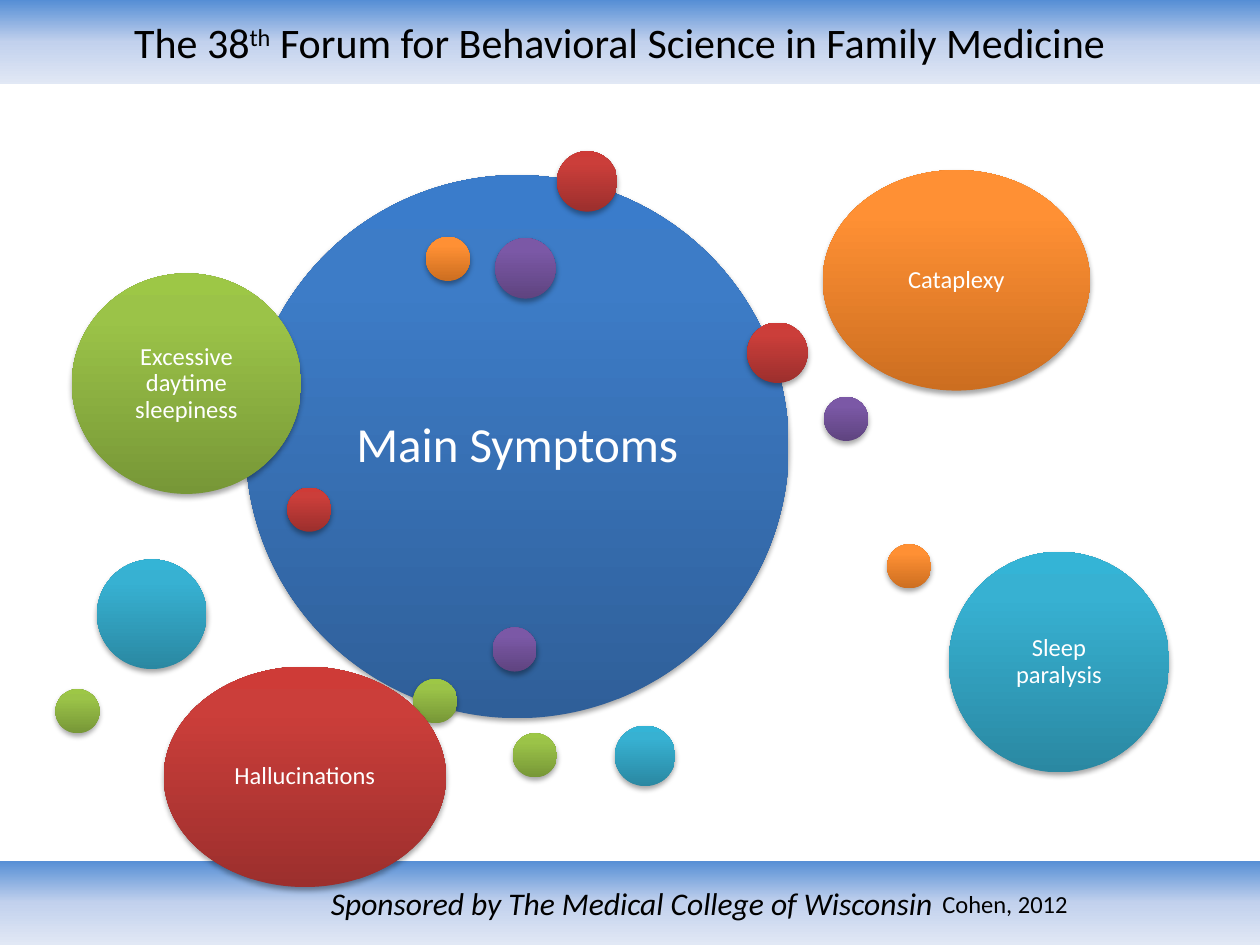
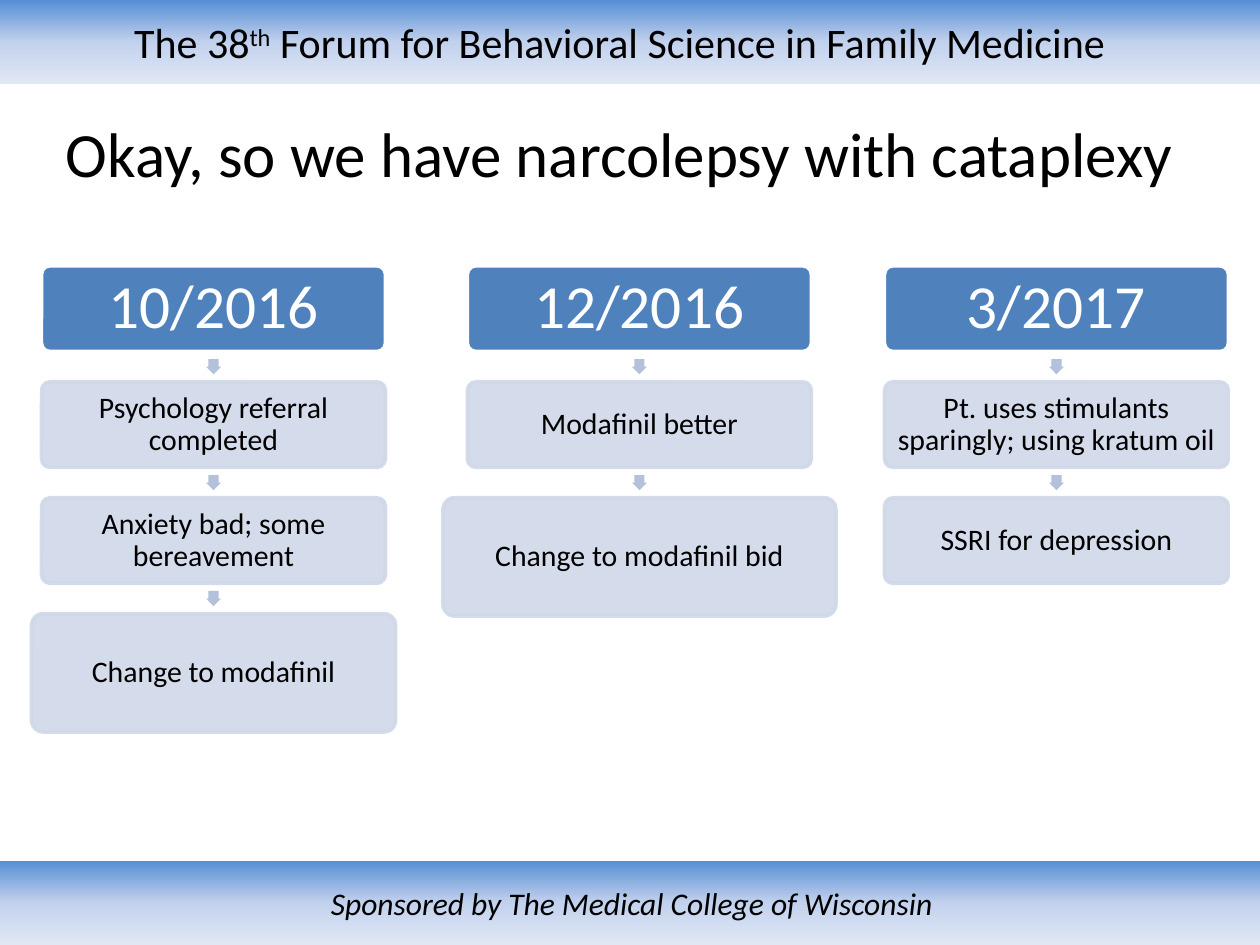
"""Build two slides on narcolepsy: a bubble diagram of symptoms and a treatment timeline."""
from lxml import etree
from pptx import Presentation
from pptx.dml.color import RGBColor
from pptx.enum.shapes import MSO_SHAPE
from pptx.enum.text import MSO_ANCHOR, PP_ALIGN
from pptx.oxml.ns import qn
from pptx.util import Inches, Pt

RECTANGLE = MSO_SHAPE.RECTANGLE
OVAL = MSO_SHAPE.OVAL
ROUNDED = MSO_SHAPE.ROUNDED_RECTANGLE
DOWN_ARROW = MSO_SHAPE.DOWN_ARROW
MIDDLE, TOP = MSO_ANCHOR.MIDDLE, MSO_ANCHOR.TOP
CENTER, LEFT = PP_ALIGN.CENTER, PP_ALIGN.LEFT

FONT = "Calibri"
BLACK = RGBColor(0x00, 0x00, 0x00)
WHITE = RGBColor(0xFF, 0xFF, 0xFF)
HEADING_BLUE = RGBColor(0x4F, 0x81, 0xBD)
CARD_BLUE = RGBColor(0xD0, 0xD8, 0xE8)
ARROW_BLUE = RGBColor(0xB3, 0xC1, 0xDB)
BAND = [(0, RGBColor(0x55, 0x8E, 0xD5)), (50, RGBColor(0xC2, 0xD1, 0xED)), (100, RGBColor(0xE1, 0xE8, 0xF5))]
BLUE = [(0, RGBColor(0x2F, 0x5F, 0x99)), (80, RGBColor(0x3D, 0x7C, 0xC7)), (100, RGBColor(0x3A, 0x7C, 0xCB))]
RED = [(0, RGBColor(0x9C, 0x2F, 0x2D)), (80, RGBColor(0xCB, 0x3E, 0x3A)), (100, RGBColor(0xCE, 0x3B, 0x37))]
GREEN = [(0, RGBColor(0x77, 0x97, 0x37)), (80, RGBColor(0x9B, 0xC3, 0x48)), (100, RGBColor(0x9D, 0xC7, 0x46))]
PURPLE = [(0, RGBColor(0x5F, 0x44, 0x80)), (80, RGBColor(0x7B, 0x58, 0xA6)), (100, RGBColor(0x7C, 0x57, 0xA8))]
TEAL = [(0, RGBColor(0x2A, 0x88, 0xA2)), (80, RGBColor(0x37, 0xB1, 0xD2)), (100, RGBColor(0x34, 0xB4, 0xD6))]
ORANGE = [(0, RGBColor(0xCC, 0x6E, 0x20)), (80, RGBColor(0xFF, 0x90, 0x34)), (100, RGBColor(0xFF, 0x91, 0x36))]


def add_filled(slide, kind, left, top, width, height, fill, angle=90):
    """Add an unlined shape with a solid colour or a list of gradient stops."""
    shape = slide.shapes.add_shape(kind, Inches(left), Inches(top), Inches(width), Inches(height))
    shape.shadow.inherit = False
    shape.line.fill.background()
    if isinstance(fill, RGBColor):
        shape.fill.solid()
        shape.fill.fore_color.rgb = fill
        return shape
    shape.fill.gradient()
    shape.fill.gradient_angle = angle
    stops = next(shape._element.spPr.iter(qn("a:gsLst")))
    for stop in list(stops):
        stops.remove(stop)
    for position, color in fill:
        stop = etree.SubElement(stops, qn("a:gs"), pos=str(position * 1000))
        etree.SubElement(stop, qn("a:srgbClr"), val=str(color))
    return shape


def write(shape, parts, size, color=BLACK, inset=None, spacing=None, align=CENTER, anchor=MIDDLE):
    """Fill a shape with one paragraph made of the given runs."""
    frame = shape.text_frame
    frame.word_wrap = True
    frame.vertical_anchor = anchor
    if inset is not None:
        frame.margin_left = frame.margin_right = Inches(inset)
        frame.margin_top = frame.margin_bottom = Inches(inset)
    paragraph = frame.paragraphs[0]
    paragraph.alignment = align
    if spacing:
        paragraph.line_spacing = spacing
    for part in parts:
        run = paragraph.add_run()
        run.text = part
        run.font.name = FONT
        run.font.size = Pt(size)
        run.font.color.rgb = color
    return paragraph


prs = Presentation()
prs.slide_width, prs.slide_height = Inches(10), Inches(7.5)
symptoms, timeline = [prs.slides.add_slide(prs.slide_layouts[6]) for _ in range(2)]

for slide in (symptoms, timeline):
    header = add_filled(slide, RECTANGLE, 0, 0, 10, 0.67, BAND, 270)
    forum = write(header, ["The 38", "th", " Forum for Behavioral Science in Family Medicine"], 24)
    forum.runs[1]._r.get_or_add_rPr().set("baseline", "30000")
    header.text_frame.margin_right = Inches(0.26)
    footer = add_filled(slide, RECTANGLE, 0, 6.83, 10.03, 0.67, BAND, 270)
    write(footer, ["Sponsored by The Medical College of Wisconsin"], 18).runs[0].font.italic = True

SMALL, MEDIUM, LARGE = 0.35, 0.48, 1.75
bubbles = [
    (1.95, 1.39, 4.31, 4.31, BLUE, "Main Symptoms"),
    (4.42, 1.2, MEDIUM, MEDIUM, RED, ""),
    (3.28, 5.39, SMALL, SMALL, GREEN, ""),
    (6.54, 3.15, SMALL, SMALL, PURPLE, ""),
    (4.88, 5.76, MEDIUM, MEDIUM, TEAL, ""),
    (3.38, 1.88, SMALL, SMALL, ORANGE, ""),
    (2.28, 3.87, SMALL, SMALL, RED, ""),
    (0.57, 2.17, 1.82, LARGE, GREEN, "Excessive daytime sleepiness"),
    (3.93, 1.89, MEDIUM, MEDIUM, PURPLE, ""),
    (0.77, 4.44, 0.87, 0.87, TEAL, ""),
    (6.53, 1.35, 2.12, LARGE, ORANGE, "Cataplexy"),
    (5.93, 2.56, MEDIUM, MEDIUM, RED, ""),
    (0.44, 5.47, SMALL, SMALL, GREEN, ""),
    (3.91, 4.98, SMALL, SMALL, PURPLE, ""),
    (7.53, 4.38, LARGE, LARGE, TEAL, "Sleep paralysis"),
    (7.04, 4.32, SMALL, SMALL, ORANGE, ""),
    (1.3, 5.29, 2.24, LARGE, RED, "Hallucinations"),
    (4.07, 5.82, SMALL, SMALL, GREEN, ""),
]
for left, top, width, height, stops, symptom in bubbles:
    bubble = add_filled(symptoms, OVAL, left, top, width, height, stops)
    effects = bubble._element.spPr.find(qn("a:effectLst"))
    shadow = etree.SubElement(effects, qn("a:outerShdw"), blurRad=str(Pt(3.1)), dist=str(Pt(1.8)),
                              dir="5400000", rotWithShape="0")
    shade = etree.SubElement(shadow, qn("a:srgbClr"), val=str(BLACK))
    etree.SubElement(shade, qn("a:alpha"), val="35000")
    if symptom:
        size, inset = (28, 0.12) if stops is BLUE else (14, 0.06)
        write(bubble, [symptom], size, WHITE, inset, 0.9)

citation = symptoms.shapes.add_textbox(Inches(7.38), Inches(7.01), Inches(2.22), Inches(0.34))
write(citation, ["Cohen, 2012"], 14, align=LEFT, anchor=TOP)

title = timeline.shapes.add_textbox(Inches(0.25), Inches(0.75), Inches(9.33), Inches(0.92))
write(title, ["Okay, so we have narcolepsy with cataplexy"], 36)

CARD_WIDTH, CARD_HEIGHT, FINAL_HEIGHT = 2.73, 0.68, 0.94
FIRST_TOP, STEP, ARROW_SIZE = 2.11, 0.92, 0.12
visits = [
    (0.33, "10/2016", ["Psychology referral completed", "Anxiety bad; some bereavement", "Change to modafinil"], 2.89),
    (3.71, "12/2016", ["Modafinil better", "Change to modafinil bid"], 3.12),
    (7.02, "3/2017", ["Pt. uses stimulants sparingly; using kratum oil", "SSRI for depression"], None),
]
for left, date, notes, final_width in visits:
    middle = left + CARD_WIDTH / 2
    heading = add_filled(timeline, ROUNDED, left, FIRST_TOP, CARD_WIDTH, CARD_HEIGHT, HEADING_BLUE)
    heading.adjustments[0] = 0.1
    heading.line.color.rgb = WHITE
    heading.line.width = Pt(2)
    write(heading, [date], 35, WHITE, 0.05, 0.9)
    for row, note in enumerate(notes, start=1):
        top = FIRST_TOP + row * STEP
        arrow = add_filled(timeline, DOWN_ARROW, middle - ARROW_SIZE / 2, top - 0.18,
                           ARROW_SIZE, ARROW_SIZE, ARROW_BLUE)
        arrow.adjustments[0], arrow.adjustments[1] = 0.67, 0.5
        width, height = CARD_WIDTH, CARD_HEIGHT
        if final_width and row == len(notes):
            width, height = final_width, FINAL_HEIGHT
        card = add_filled(timeline, ROUNDED, middle - width / 2, top, width, height, CARD_BLUE)
        card.adjustments[0] = 0.1
        card.line.color.rgb = CARD_BLUE
        card.line.width = Pt(2)
        for color in card._element.spPr.iter(qn("a:srgbClr")):
            etree.SubElement(color, qn("a:alpha"), val="90000")
        write(card, [note], 17, BLACK, 0.02, 0.9)

prs.save("out.pptx")
